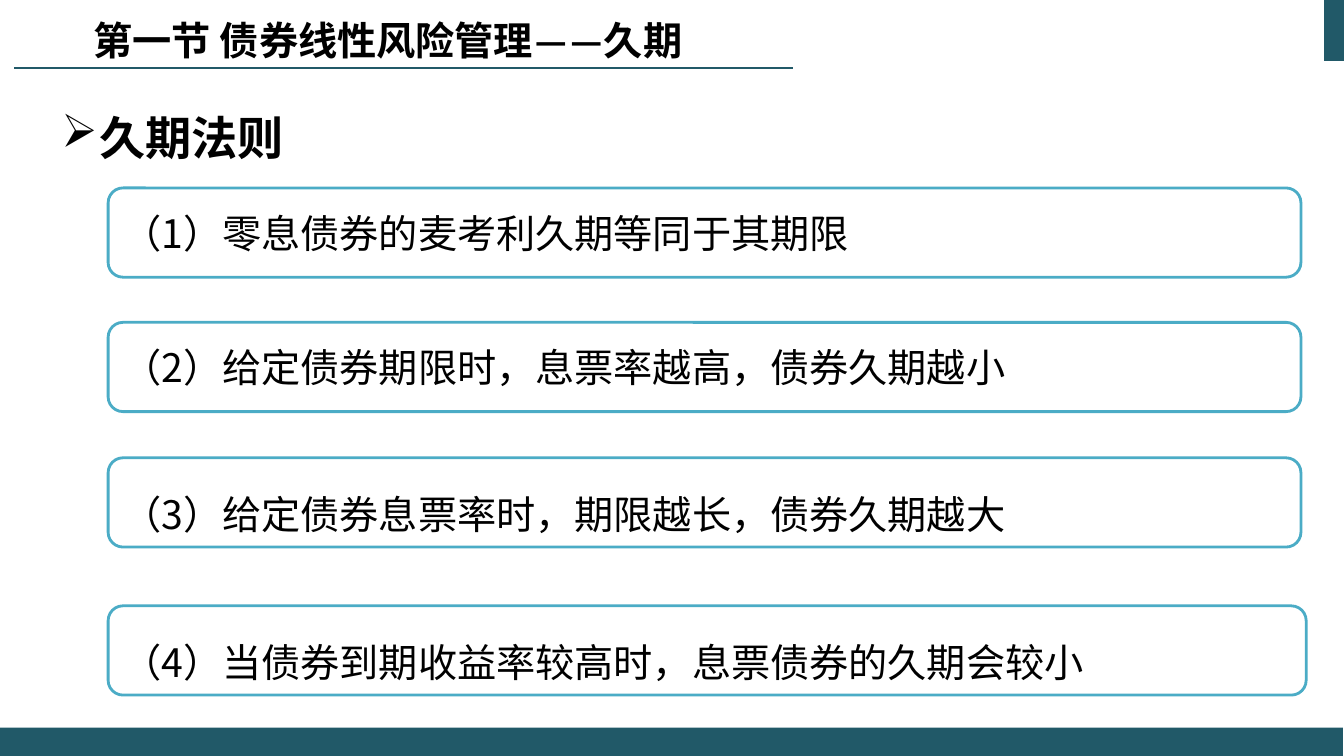
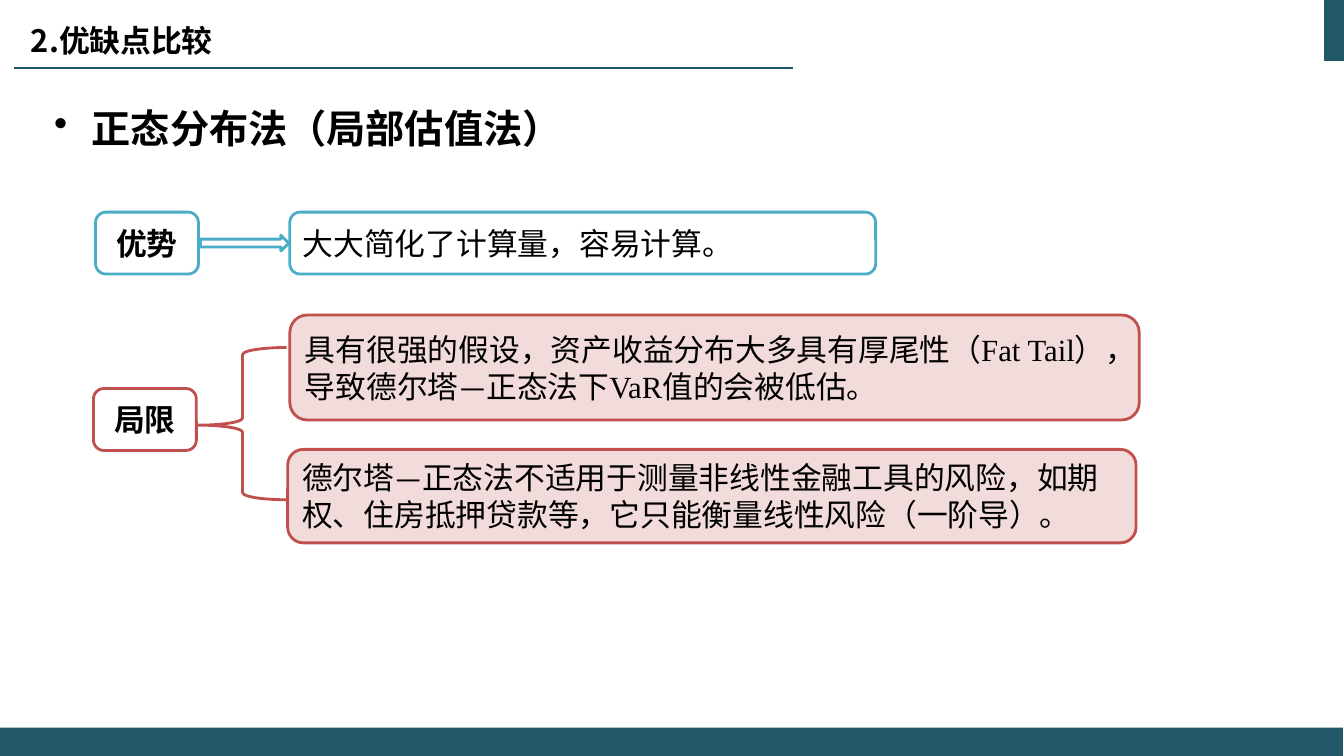
from dataclasses import dataclass

from lxml import etree
from pptx import Presentation
from pptx.dml.color import RGBColor
from pptx.enum.shapes import MSO_CONNECTOR, MSO_SHAPE
from pptx.enum.text import MSO_ANCHOR, PP_ALIGN
from pptx.oxml.ns import qn
from pptx.util import Emu, Pt

PX = 9525
BLANK_LAYOUT = 6

STRAIGHT = MSO_CONNECTOR.STRAIGHT
RECTANGLE = MSO_SHAPE.RECTANGLE
ROUNDED = MSO_SHAPE.ROUNDED_RECTANGLE
LEFT_BRACE = MSO_SHAPE.LEFT_BRACE
RIGHT_ARROW = MSO_SHAPE.RIGHT_ARROW
LEFT, CENTER = PP_ALIGN.LEFT, PP_ALIGN.CENTER
TOP, MIDDLE = MSO_ANCHOR.TOP, MSO_ANCHOR.MIDDLE

BAND = "215968"
BLUE = "4BACC6"
RED = "C0504D"
PINK = "F2DCDB"
WHITE = "FFFFFF"
BLACK = "000000"

SANS = "Noto Sans CJK SC"
BODY = "Calibri"
SERIF = "Times New Roman"


@dataclass(frozen=True)
class Box:
    left: int
    top: int
    width: int
    height: int

    def emu(self) -> list[Emu]:
        return [Emu(value * PX) for value in (self.left, self.top, self.width, self.height)]


@dataclass(frozen=True)
class Bullet:
    character: str
    margin: int
    hanging: int


@dataclass(frozen=True)
class Card:
    """A rounded, outlined box with its text format."""
    box: Box
    text: str
    line: str = BLUE
    fill: str = WHITE
    font: str = BODY
    size: int = 22
    bold: bool = False
    align: PP_ALIGN = LEFT
    spacing: float = 1.0


def color(value: str) -> RGBColor:
    return RGBColor.from_string(value)


def write_text(shape, text: str, *, size: int, font: str = BODY, bold: bool = False,
               align=LEFT, anchor=MIDDLE, spacing: float = 1.0,
               bullet: Bullet | None = None) -> None:
    frame = shape.text_frame
    frame.word_wrap = True
    frame.vertical_anchor = anchor
    paragraph = frame.paragraphs[0]
    paragraph.alignment = align
    paragraph.line_spacing = spacing
    if bullet:
        properties = paragraph._p.get_or_add_pPr()
        properties.set("marL", str(bullet.margin * PX))
        properties.set("indent", str(-bullet.hanging * PX))
        etree.SubElement(properties, qn("a:buChar")).set("char", bullet.character)
    run = paragraph.add_run()
    run.text = text
    run.font.name = font
    run.font.size = Pt(size)
    run.font.bold = bold
    run.font.color.rgb = color(BLACK)
    east_asian = etree.SubElement(run._r.get_or_add_rPr(), qn("a:ea"))
    east_asian.set("typeface", BODY)


def add_text(slide, box: Box, text: str, **text_format) -> None:
    write_text(slide.shapes.add_textbox(*box.emu()), text, **text_format)


def add_figure(slide, kind, box: Box, fill: str, line: str | None = None):
    shape = slide.shapes.add_shape(kind, *box.emu())
    shape.shadow.inherit = False
    shape.fill.solid()
    shape.fill.fore_color.rgb = color(fill)
    if line:
        shape.line.color.rgb = color(line)
        shape.line.width = Pt(2)
    else:
        shape.line.fill.background()
    return shape


def add_card(slide, card: Card) -> None:
    shape = add_figure(slide, ROUNDED, card.box, card.fill, card.line)
    write_text(shape, card.text, size=card.size, font=card.font, bold=card.bold,
               align=card.align, spacing=card.spacing)


def add_framed_slide(presentation):
    """Add a blank slide with the shared corner, title rule and footer band."""
    slide = presentation.slides.add_slide(presentation.slide_layouts[BLANK_LAYOUT])
    add_figure(slide, RECTANGLE, Box(1261, 0, 19, 58), BAND)
    rule = slide.shapes.add_connector(STRAIGHT, *Box(755, 65, 13, 65).emu())
    rule.line.color.rgb = color(BAND)
    rule.line.width = Pt(1.5)
    etree.SubElement(rule._element.spPr, qn("a:effectLst"))
    add_figure(slide, RECTANGLE, Box(0, 693, 1279, 27), BAND)
    return slide


def build_duration_rules(presentation) -> None:
    slide = add_framed_slide(presentation)
    add_text(slide, Box(13, 73, 1255, 577), "久期法则", size=33, bold=True, anchor=TOP,
             spacing=1.5, bullet=Bullet("➢", 72, 36))
    add_text(slide, Box(65, 11, 609, 54), "第一节 债券线性风险管理——久期",
             size=28, font=SANS, bold=True, align=CENTER)
    rules = [
        (179, 1136, 1.0, "（1）零息债券的麦考利久期等同于其期限"),
        (307, 1136, 1.0, "（2）给定债券期限时，息票率越高，债券久期越小"),
        (436, 1136, 1.5, "（3）给定债券息票率时，期限越长，债券久期越大"),
        (577, 1141, 1.5, "（4）当债券到期收益率较高时，息票债券的久期会较小"),
    ]
    for top, width, spacing, text in rules:
        add_card(slide, Card(Box(103, top, width, 85), text, font=SANS, size=28,
                             spacing=spacing))


def build_comparison(presentation) -> None:
    slide = add_framed_slide(presentation)
    add_text(slide, Box(20, 12, 1044, 53), "2.优缺点比较", size=22, font=SANS, bold=True)
    add_text(slide, Box(42, 95, 1185, 478), "正态分布法（局部估值法）", size=28, bold=True,
             anchor=TOP, bullet=Bullet("•", 36, 36))
    brace = add_figure(slide, LEFT_BRACE, Box(189, 331, 84, 145), WHITE, RED)
    brace.adjustments[0] = 0.08
    brace.adjustments[1] = 0.51
    cards = [
        Card(Box(91, 202, 98, 59), "优势", bold=True, align=CENTER),
        Card(Box(276, 202, 558, 59), "大大简化了计算量，容易计算。"),
        Card(Box(89, 370, 98, 59), "局限", line=RED, bold=True, align=CENTER),
        Card(Box(276, 300, 809, 100),
             "具有很强的假设，资产收益分布大多具有厚尾性（Fat Tail），"
             "导致德尔塔—正态法下VaR值的会被低估。", line=RED, fill=PINK, font=SERIF),
        Card(Box(274, 428, 808, 89),
             "德尔塔—正态法不适用于测量非线性金融工具的风险，如期权、住房抵押贷款等，"
             "它只能衡量线性风险（一阶导）。", line=RED, fill=PINK, font=SERIF),
    ]
    for card in cards:
        add_card(slide, card)
    add_figure(slide, RIGHT_ARROW, Box(191, 224, 84, 15), WHITE, BLUE)


def main() -> None:
    presentation = Presentation()
    presentation.slide_width = Emu(1280 * PX)
    presentation.slide_height = Emu(720 * PX)
    build_duration_rules(presentation)
    build_comparison(presentation)
    presentation.save("out.pptx")


if __name__ == "__main__":
    main()
